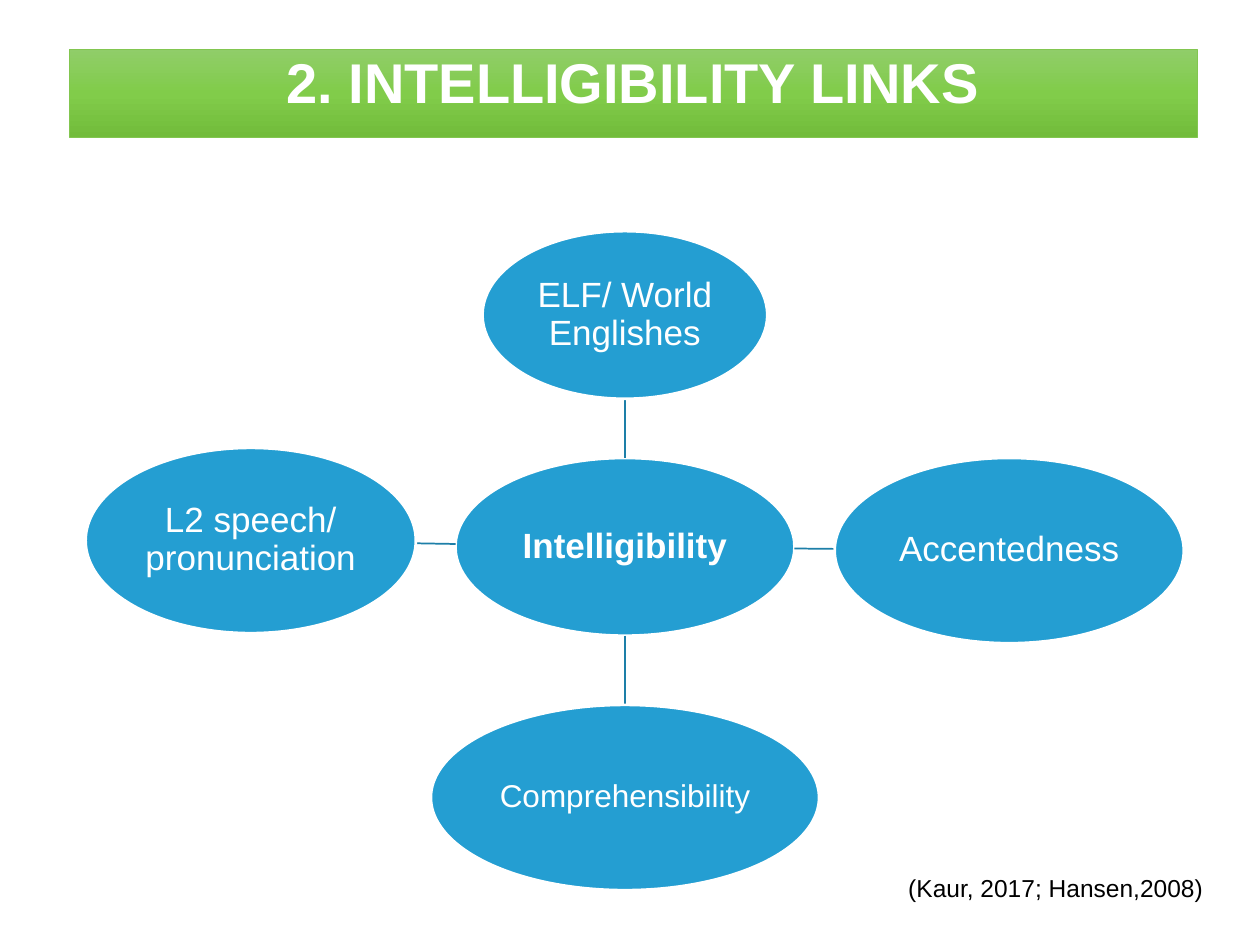
from copy import deepcopy
from dataclasses import dataclass
from math import hypot

from lxml import etree
from pptx import Presentation
from pptx.dml.color import RGBColor
from pptx.enum.shapes import MSO_CONNECTOR, MSO_SHAPE
from pptx.enum.text import MSO_ANCHOR, MSO_AUTO_SIZE, PP_ALIGN
from pptx.oxml.ns import qn
from pptx.util import Inches, Pt

OVAL = MSO_SHAPE.OVAL
STRAIGHT = MSO_CONNECTOR.STRAIGHT
TOP, MIDDLE = MSO_ANCHOR.TOP, MSO_ANCHOR.MIDDLE
FIXED = MSO_AUTO_SIZE.NONE
LEFT, CENTER = PP_ALIGN.LEFT, PP_ALIGN.CENTER


@dataclass(frozen=True)
class Theme:
    font: str = "Arial"
    white: str = "FFFFFF"
    black: str = "000000"
    node: str = "249ED2"
    link: str = "1D7FA8"
    edge: str = "82C650"
    band: tuple = ("90CD69", "81CC4A", "72BC3B")
    head: int = 32
    body: int = 20
    small: int = 18
    cite: int = 14


@dataclass(frozen=True)
class Node:
    text: str
    x: float
    y: float
    w: float
    h: float
    size: int = Theme.body
    bold: bool = False

    def rim(self, other):
        dx, dy = other.x - self.x, other.y - self.y
        scale = 1 / hypot(dx / (self.w / 2), dy / (self.h / 2))
        return self.x + dx * scale, self.y + dy * scale


def rgb(code):
    return RGBColor.from_string(code)


def write(frame, text, *, size, color, font, bold=False, align=CENTER,
          anchor=MIDDLE, spacing=0.9, wrap=True, inset=None):
    frame.auto_size = FIXED
    frame.word_wrap = wrap
    frame.vertical_anchor = anchor
    if inset is not None:
        frame.margin_left = frame.margin_right = Inches(inset)
        frame.margin_top = frame.margin_bottom = Inches(inset)
    line = frame.paragraphs[0]
    line.alignment = align
    line.line_spacing = spacing
    run = line.add_run()
    run.text = text
    run.font.name = font
    run.font.size = Pt(size)
    run.font.bold = bold
    run.font.color.rgb = rgb(color)


class Deck:
    def __init__(self, theme):
        self.theme = theme
        self.file = Presentation()
        self.file.slide_width = Inches(10)
        self.file.slide_height = Inches(7.5)
        self.slide = self.file.slides.add_slide(self.file.slide_layouts[5])

    def title(self, text, x, y, w, h):
        theme = self.theme
        box = self.slide.shapes.title
        box.left, box.top = Inches(x), Inches(y)
        box.width, box.height = Inches(w), Inches(h)
        box.fill.gradient()
        box.fill.gradient_angle = 270
        stops = box._element.spPr.find(qn("a:gradFill")).find(qn("a:gsLst"))
        stops.insert(1, deepcopy(stops[0]))
        for i, (stop, code) in enumerate(zip(box.fill.gradient_stops, theme.band)):
            stop.position = i / 2
            stop.color.rgb = rgb(code)
        box.line.color.rgb = rgb(theme.edge)
        box.line.width = Pt(0.5)
        write(box.text_frame, text, size=theme.head, color=theme.white,
              font=theme.font, bold=True, anchor=TOP)

    def oval(self, node):
        theme = self.theme
        shape = self.slide.shapes.add_shape(
            OVAL, Inches(node.x - node.w / 2), Inches(node.y - node.h / 2),
            Inches(node.w), Inches(node.h))
        shape.shadow.inherit = False
        shape.fill.solid()
        shape.fill.fore_color.rgb = rgb(theme.node)
        shape.line.color.rgb = rgb(theme.white)
        shape.line.width = Pt(1.5)
        write(shape.text_frame, node.text, size=node.size, color=theme.white,
              font=theme.font, bold=node.bold, inset=0.01)

    def link(self, start, end):
        points = start.rim(end) + end.rim(start)
        line = self.slide.shapes.add_connector(
            STRAIGHT, *(Inches(p) for p in points))
        line.line.color.rgb = rgb(self.theme.link)
        line.line.width = Pt(1)
        etree.SubElement(line._element.spPr, qn("a:effectLst"))

    def note(self, text, x, y, w, h):
        theme = self.theme
        box = self.slide.shapes.add_textbox(
            Inches(x), Inches(y), Inches(w), Inches(h))
        write(box.text_frame, text, size=theme.cite, color=theme.black,
              font=theme.font, align=LEFT, anchor=TOP, spacing=1, wrap=False)

    def save(self):
        self.file.save("out.pptx")


def main():
    theme = Theme()
    deck = Deck(theme)
    deck.title("2. INTELLIGIBILITY LINKS", 0.55, 0.39, 8.95, 0.7)
    hub = Node("Intelligibility", 4.96, 4.34, 2.69, 1.41, bold=True)
    nodes = (
        Node("ELF/ World Englishes", 4.96, 2.5, 2.26, 1.33),
        Node("Accentedness", 8.01, 4.37, 2.77, 1.47),
        Node("Comprehensibility", 4.96, 6.33, 3.08, 1.47, theme.small),
        Node("L2 speech/ pronunciation", 1.99, 4.29, 2.62, 1.47),
    )
    deck.oval(hub)
    for node in nodes:
        deck.link(hub, node)
        deck.oval(node)
    deck.note("(Kaur, 2017; Hansen,2008)", 7.11, 6.88, 2.61, 0.34)
    deck.save()


if __name__ == "__main__":
    main()
